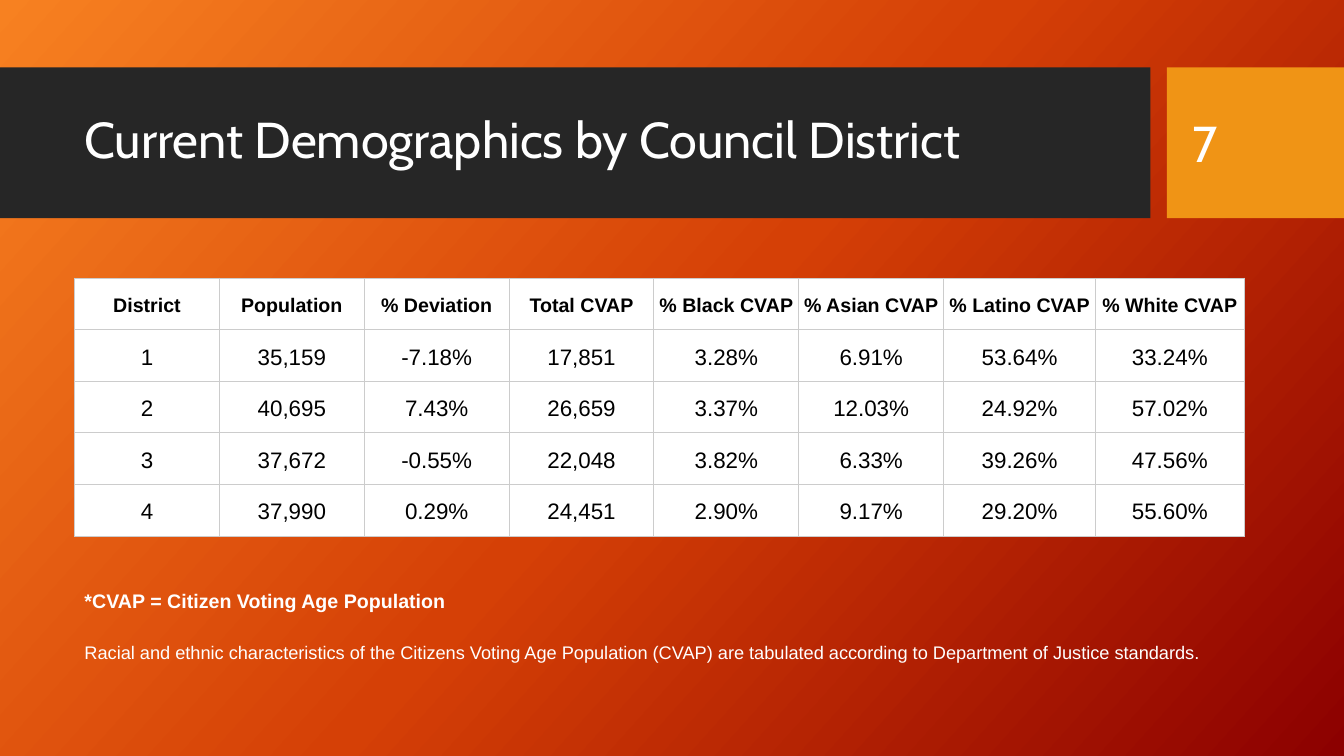
from dataclasses import dataclass

from lxml.etree import SubElement
from pptx import Presentation
from pptx.dml.color import RGBColor as RGB
from pptx.enum.shapes import MSO_SHAPE as Shape
from pptx.enum.text import MSO_ANCHOR as Anchor, MSO_AUTO_SIZE as AutoSize, PP_ALIGN as Align
from pptx.oxml.ns import qn
from pptx.util import Cm, Pt


@dataclass(frozen=True)
class Theme:
    gradient: tuple = ((0, "F78121"), (50, "D54006"), (100, "8C0000"))
    gradient_angle: int = 42
    band: str = "262626"
    accent: str = "F09415"
    light: str = "FFFFFF"
    dark: str = "000000"
    grid: str = "CCCCCC"
    grid_width: float = 0.83
    heading_font: str = "Cabin"
    body_font: str = "Arial"
    title_size: int = 36
    header_size: int = 14
    cell_size: int = 16
    note_size: int = 13
    body_spacing: float = 1.15


class SlideBuilder:
    def __init__(self, prs, theme):
        self.theme = theme
        self.slide = prs.slides.add_slide(prs.slide_layouts[5])

    def background(self):
        fill = self.slide.background.fill
        fill.gradient()
        fill.gradient_angle = 360 - self.theme.gradient_angle
        stops = self.slide._element.find(".//" + qn("a:gsLst"))
        stops.clear()
        for pos, color in self.theme.gradient:
            stop = SubElement(stops, qn("a:gs"), pos=str(pos * 1000))
            SubElement(stop, qn("a:srgbClr"), val=color)

    def rect(self, x, y, w, h, color):
        sp = self.slide.shapes.add_shape(Shape.RECTANGLE, Cm(x), Cm(y), Cm(w), Cm(h))
        sp.shadow.inherit = False
        sp.fill.solid()
        sp.fill.fore_color.rgb = RGB.from_string(color)
        sp.line.fill.background()

    def style(self, p, font, size, color, bold=False, spacing=1.0, align=Align.LEFT):
        p.alignment = align
        p.line_spacing = spacing
        for r in p.runs:
            r.font.name = font
            r.font.size = Pt(size)
            r.font.bold = bold
            r.font.color.rgb = RGB.from_string(color)

    def frame(self, sp, text, anchor, inset_y):
        tf = sp.text_frame
        tf.text = text
        tf.word_wrap = True
        tf.auto_size = AutoSize.NONE
        tf.vertical_anchor = anchor
        tf.margin_left = tf.margin_right = Cm(0.25)
        tf.margin_top = tf.margin_bottom = Cm(inset_y)
        return tf

    def heading(self, sp, text, spacing):
        t = self.theme
        tf = self.frame(sp, text, Anchor.MIDDLE, 0.13)
        self.style(tf.paragraphs[0], t.heading_font, t.title_size, t.light, spacing=spacing)

    def title(self, text, x, y, w, h):
        sp = self.slide.shapes.title
        sp.left, sp.top, sp.width, sp.height = Cm(x), Cm(y), Cm(w), Cm(h)
        self.slide.shapes._spTree.append(sp._element)
        self.heading(sp, text, 0.9)

    def page_number(self, text, x, y, w, h):
        sp = self.slide.shapes.add_textbox(Cm(x), Cm(y), Cm(w), Cm(h))
        self.heading(sp, text, 1.0)

    def notes(self, lead, detail, x, y, w, h):
        t = self.theme
        sp = self.slide.shapes.add_textbox(Cm(x), Cm(y), Cm(w), Cm(h))
        tf = self.frame(sp, lead, Anchor.TOP, 0.25)
        self.style(tf.paragraphs[0], t.body_font, t.header_size, t.light, True, t.body_spacing)
        p = tf.add_paragraph()
        p.text = detail
        p.space_before = Pt(18.5)
        self.style(p, t.body_font, t.note_size, t.light, False, t.body_spacing)

    def borders(self, cell):
        tc_pr = cell._tc.get_or_add_tcPr()
        for side in ("lnL", "lnR", "lnT", "lnB"):
            ln = SubElement(tc_pr, qn(f"a:{side}"), w=str(Pt(self.theme.grid_width)))
            fill = SubElement(ln, qn("a:solidFill"))
            SubElement(fill, qn("a:srgbClr"), val=self.theme.grid)

    def table(self, rows, x, y, widths, row_height):
        t = self.theme
        table = self.slide.shapes.add_table(
            len(rows), len(widths), Cm(x), Cm(y), Cm(sum(widths)), Cm(row_height * len(rows))
        ).table
        table.first_row = table.horz_banding = False
        for column, width in zip(table.columns, widths):
            column.width = Cm(width)
        for i, values in enumerate(rows):
            table.rows[i].height = Cm(row_height)
            header = i == 0
            size = t.header_size if header else t.cell_size
            for j, value in enumerate(values):
                cell = table.cell(i, j)
                self.borders(cell)
                cell.fill.solid()
                cell.fill.fore_color.rgb = RGB.from_string(t.light)
                cell.vertical_anchor = Anchor.MIDDLE
                cell.margin_left = cell.margin_right = Cm(0.08)
                cell.margin_top = cell.margin_bottom = Cm(0.08)
                cell.text_frame.text = value
                self.style(cell.text_frame.paragraphs[0], t.body_font, size, t.dark,
                           header, t.body_spacing, Align.CENTER)


DEMOGRAPHICS = (
    ("District", "Population", "% Deviation", "Total CVAP",
     "% Black CVAP", "% Asian CVAP", "% Latino CVAP", "% White CVAP"),
    ("1", "35,159", "-7.18%", "17,851", "3.28%", "6.91%", "53.64%", "33.24%"),
    ("2", "40,695", "7.43%", "26,659", "3.37%", "12.03%", "24.92%", "57.02%"),
    ("3", "37,672", "-0.55%", "22,048", "3.82%", "6.33%", "39.26%", "47.56%"),
    ("4", "37,990", "0.29%", "24,451", "2.90%", "9.17%", "29.20%", "55.60%"),
)


def main():
    prs = Presentation()
    prs.slide_width, prs.slide_height = Cm(33.87), Cm(19.05)
    theme = Theme()
    s = SlideBuilder(prs, theme)
    s.background()
    s.rect(0, 1.7, 28.99, 3.8, theme.band)
    s.rect(29.41, 1.7, 4.46, 3.8, theme.accent)
    s.page_number("7", 29.8, 2.08, 3.2, 3.02)
    s.title("Current Demographics by Council District", 1.88, 2.08, 26.7, 3)
    s.table(DEMOGRAPHICS, 1.88, 7.01, [3.65] * 6 + [3.83, 3.74], 1.3)
    s.notes(
        "*CVAP = Citizen Voting Age Population",
        "Racial and ethnic characteristics of the Citizens Voting Age Population (CVAP) "
        "are tabulated according to Department of Justice standards.",
        1.88, 14.5, 29.46, 2.44,
    )
    prs.save("out.pptx")


if __name__ == "__main__":
    main()
